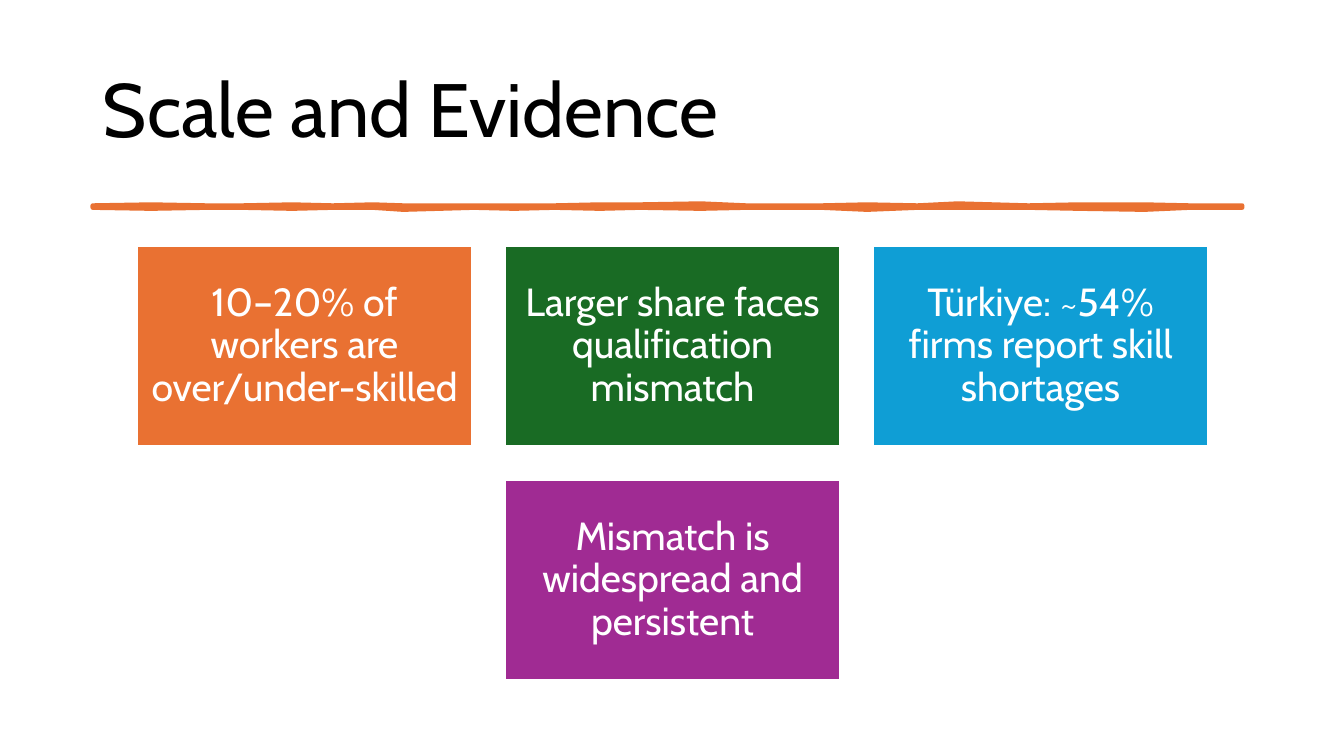
from dataclasses import dataclass

from pptx import Presentation
from pptx import util as u
from pptx.dml.color import RGBColor
from pptx.enum import shapes, text
from pptx.util import Inches


@dataclass(frozen=True)
class Theme:
    font: str = "Cabin"
    title_size: int = 54
    card_size: int = 28
    line_spacing: float = 0.9
    black: str = "000000"
    white: str = "FFFFFF"
    orange: str = "E97132"
    green: str = "196B24"
    blue: str = "0F9ED5"
    purple: str = "A02B93"


THEME = Theme()

CARD_LEFT, CARD_TOP = 1.36, 2.44
CARD_WIDTH, CARD_HEIGHT = 3.32, 1.99
COLUMN_STEP, ROW_STEP = 3.65, 2.32
CARD_INSET = 0.12

# Column, row, fill and wording of each card
CARDS = [
    (0, 0, THEME.orange, "10–20% of workers are over/under-skilled"),
    (1, 0, THEME.green, "Larger share faces qualification mismatch"),
    (2, 0, THEME.blue, "Türkiye: ~54% firms report skill shortages"),
    (1, 1, THEME.purple, "Mismatch is widespread and persistent"),
]

# Position across the slide, upper edge and lower edge of the hand-drawn rule
RULE_EDGES = [
    (0.92, 2.04, 2.06), (1.5, 2.03, 2.07), (2.05, 2.04, 2.06),
    (2.4, 2.04, 2.06), (2.9, 2.03, 2.07), (3.3, 2.04, 2.06),
    (3.7, 2.03, 2.06), (4.0, 2.04, 2.08), (4.7, 2.04, 2.06),
    (5.1, 2.04, 2.07), (5.5, 2.04, 2.06), (5.95, 2.03, 2.07),
    (6.35, 2.03, 2.06), (6.95, 2.02, 2.07), (7.4, 2.04, 2.06),
    (8.15, 2.04, 2.06), (8.6, 2.03, 2.08), (9.1, 2.04, 2.06),
    (9.5, 2.02, 2.06), (10.2, 2.04, 2.06), (10.7, 2.03, 2.07),
    (11.35, 2.03, 2.08), (11.8, 2.04, 2.06), (12.32, 2.04, 2.06),
]


def paint(shape, fill, line, line_width):
    shape.shadow.inherit = False
    shape.fill.solid()
    shape.fill.fore_color.rgb = RGBColor.from_string(fill)
    shape.line.color.rgb = RGBColor.from_string(line)
    shape.line.width = u.Pt(line_width)


def write(shape, wording, size, color, alignment):
    frame = shape.text_frame
    frame.text = wording
    frame.word_wrap = True
    frame.auto_size = text.MSO_AUTO_SIZE.NONE
    frame.vertical_anchor = text.MSO_ANCHOR.MIDDLE
    paragraph = frame.paragraphs[0]
    paragraph.alignment = alignment
    paragraph.line_spacing = THEME.line_spacing
    paragraph.font.name = THEME.font
    paragraph.font.size = u.Pt(size)
    paragraph.font.color.rgb = RGBColor.from_string(color)


def add_title(slide, wording):
    title = slide.shapes.title
    title.left, title.top = Inches(0.92), Inches(0.4)
    title.width, title.height = Inches(11.5), Inches(1.45)
    write(title, wording, THEME.title_size, THEME.black, text.PP_ALIGN.LEFT)


def add_hand_drawn_rule(slide):
    upper = [(Inches(x), Inches(top)) for x, top, _ in RULE_EDGES]
    lower = [(Inches(x), Inches(bottom)) for x, _, bottom in reversed(RULE_EDGES)]
    builder = slide.shapes.build_freeform(*upper[0])
    builder.add_line_segments(upper[1:] + lower, close=True)
    paint(builder.convert_to_shape(), THEME.orange, THEME.orange, 3.25)


def add_card(slide, column, row, fill, wording):
    card = slide.shapes.add_shape(
        shapes.MSO_SHAPE.RECTANGLE,
        Inches(CARD_LEFT + column * COLUMN_STEP),
        Inches(CARD_TOP + row * ROW_STEP),
        Inches(CARD_WIDTH),
        Inches(CARD_HEIGHT),
    )
    paint(card, fill, THEME.white, 1.5)
    frame = card.text_frame
    frame.margin_left = frame.margin_right = Inches(CARD_INSET)
    frame.margin_top = frame.margin_bottom = Inches(CARD_INSET)
    write(card, wording, THEME.card_size, THEME.white, text.PP_ALIGN.CENTER)


def main():
    presentation = Presentation()
    presentation.slide_width = Inches(13.33)
    presentation.slide_height = Inches(7.5)
    title_only = presentation.slide_layouts[5]
    slide = presentation.slides.add_slide(title_only)
    add_title(slide, "Scale and Evidence")
    add_hand_drawn_rule(slide)
    for card in CARDS:
        add_card(slide, *card)
    presentation.save("out.pptx")


if __name__ == "__main__":
    main()
